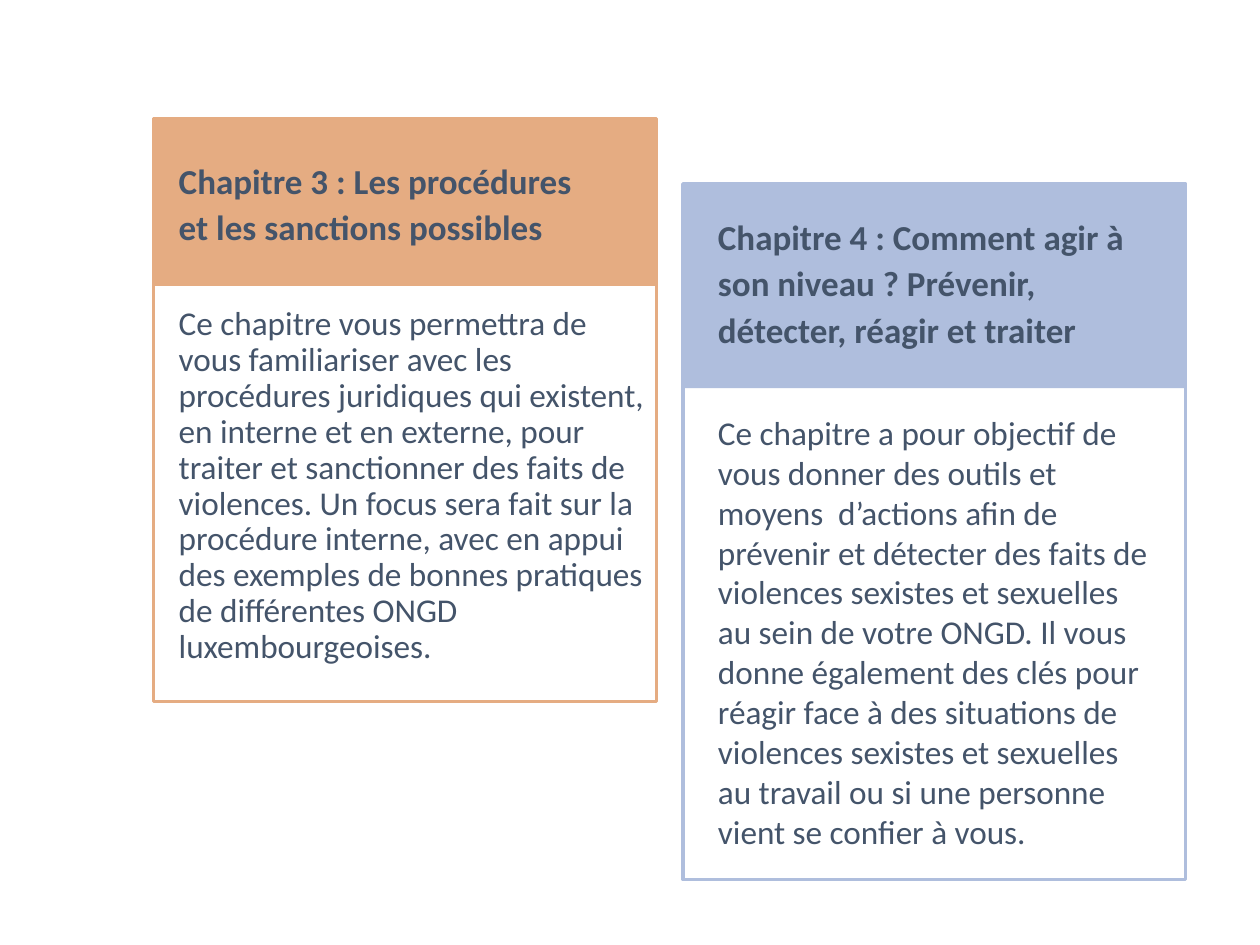
from dataclasses import dataclass

from pptx import Presentation
from pptx.dml.color import RGBColor
from pptx.enum.shapes import MSO_SHAPE
from pptx.enum.text import MSO_ANCHOR, PP_ALIGN
from pptx.util import Inches, Pt

RECT = MSO_SHAPE.RECTANGLE
TOP = MSO_ANCHOR.TOP
LEFT = PP_ALIGN.LEFT
COLS, ROWS = 100, 75


@dataclass(frozen=True)
class Theme:
    font: str = "Calibri"
    text: str = "44546A"
    orange: str = "E5AC82"
    blue: str = "AFBEDD"
    title_size: int = 20
    body_size: int = 19
    border: int = 2


class Deck:
    """Holds the theme and the current slide; lengths are grid columns and rows."""

    def __init__(self, prs, theme):
        self.prs, self.theme = prs, theme
        self.s = prs.slides.add_slide(prs.slide_layouts[6])

    def box(self, x, y, w, h):
        col, row = self.prs.slide_width / COLS, self.prs.slide_height / ROWS
        return round(x * col), round(y * row), round(w * col), round(h * row)

    def rect(self, area, fill=None, line=None):
        sp = self.s.shapes.add_shape(RECT, *self.box(*area))
        sp.shadow.inherit = False
        if fill:
            sp.fill.solid()
            sp.fill.fore_color.rgb = RGBColor.from_string(fill)
        else:
            sp.fill.background()
        if line:
            sp.line.color.rgb = RGBColor.from_string(line)
            sp.line.width = Pt(self.theme.border)
        else:
            sp.line.fill.background()

    def paragraph(self, p, lines, size, bold, spacing, before=0, after=0):
        p.alignment = LEFT
        p.line_spacing = spacing
        p.space_before, p.space_after = Pt(before), Pt(after)
        for i, line in enumerate(lines):
            if i:
                p.add_line_break()
            r = p.add_run()
            r.text = line
            r.font.name = self.theme.font
            r.font.size = Pt(size)
            r.font.bold = bold
            r.font.color.rgb = RGBColor.from_string(self.theme.text)

    def text(self, area, title, body, body_spacing, gap):
        tf = self.s.shapes.add_textbox(*self.box(*area)).text_frame
        tf.word_wrap = True
        tf.vertical_anchor = TOP
        self.paragraph(tf.paragraphs[0], title, self.theme.title_size, True, 1.1, after=gap)
        self.paragraph(tf.add_paragraph(), [body], self.theme.body_size, False,
                       body_spacing, before=7)

    def card(self, x, y, header_h, h, color):
        width = 39.9
        self.rect((x, y + 0.1, width, header_h), fill=color)
        self.rect((x, y, width, h), line=color)


def main():
    prs = Presentation()
    prs.slide_width, prs.slide_height = Inches(10), Inches(7.5)
    theme = Theme()
    deck = Deck(prs, theme)

    # Cards
    deck.card(54.2, 14.6, 16.1, 55.2, theme.blue)
    deck.card(12.2, 9.4, 13.2, 46.3, theme.orange)

    # Chapter 3
    deck.text(
        (13.2, 11.8, 38.9, 50.6),
        ["Chapitre 3 : Les procédures", "et les sanctions possibles"],
        "Ce chapitre vous permettra de vous familiariser avec les procédures juridiques qui "
        "existent, en interne et en externe, pour traiter et sanctionner des faits de "
        "violences. Un focus sera fait sur la procédure interne, avec en appui des exemples "
        "de bonnes pratiques de différentes ONGD luxembourgeoises.",
        body_spacing=0.9, gap=27)

    # Chapter 4
    deck.text(
        (56, 16.3, 36.6, 53.7),
        ["Chapitre 4 : Comment agir à son niveau ? Prévenir, détecter, réagir et traiter"],
        "Ce chapitre a pour objectif de vous donner des outils et moyens  d’actions afin de "
        "prévenir et détecter des faits de violences sexistes et sexuelles au sein de votre "
        "ONGD. Il vous donne également des clés pour réagir face à des situations de "
        "violences sexistes et sexuelles au travail ou si une personne vient se confier à "
        "vous.",
        body_spacing=1.0, gap=28.5)

    prs.save("out.pptx")


if __name__ == "__main__":
    main()
